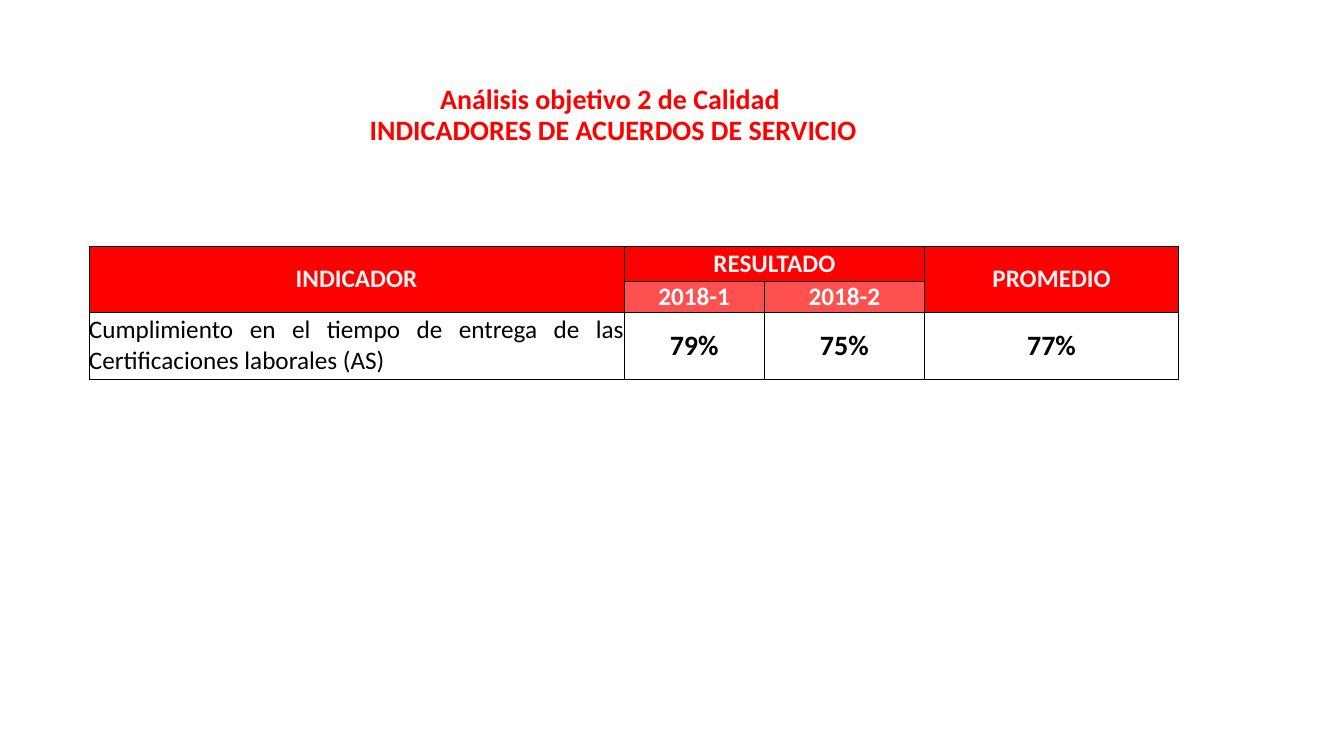
"""Build the slide with the service agreement indicators."""
import dataclasses

import lxml.etree
import pptx
import pptx.dml.color
import pptx.enum.text
import pptx.oxml.ns
import pptx.slide
import pptx.table
import pptx.text.text
import pptx.util
from pptx.util import Cm

FONT = "Calibri"
RED = "FF0000"
CENTER = pptx.enum.text.PP_ALIGN.CENTER
JUSTIFY = pptx.enum.text.PP_ALIGN.JUSTIFY
COLUMN_WIDTHS = (13.49, 3.53, 4.04, 6.4)
ROW_HEIGHTS = (0.89, 0.77, 1.7)


@dataclasses.dataclass(frozen=True)
class CellSpec:
    """Text, place and look of one table cell."""

    row: int
    column: int
    text: str
    fill: str = RED
    color: str = "F2F2F2"
    size: int = 18
    bold: bool = True
    align: pptx.enum.text.PP_ALIGN = CENTER
    rows: int = 1
    columns: int = 1


HEADERS = [
    CellSpec(0, 0, "INDICADOR", rows=2),
    CellSpec(0, 1, "RESULTADO", columns=2),
    CellSpec(0, 3, "PROMEDIO", rows=2),
]
PERIODS = [
    CellSpec(1, column, text, "FF5050", "FFFFFF")
    for column, text in enumerate(("2018-1", "2018-2"), start=1)
]
INDICATOR = CellSpec(
    2, 0, "Cumplimiento en el tiempo de entrega de las Certificaciones laborales (AS)",
    "FFFFFF", "000000", bold=False, align=JUSTIFY,
)
RESULTS = [
    CellSpec(2, column, text, "FFFFFF", "000000", 20)
    for column, text in enumerate(("79%", "75%", "77%"), start=1)
]


def rgb(color: str) -> pptx.dml.color.RGBColor:
    """Turn a hex string into a colour."""
    return pptx.dml.color.RGBColor.from_string(color)


def format_text(para: pptx.text.text._Paragraph, size: int, color: str, bold: bool) -> None:
    """Set the font of every run in a paragraph."""
    for span in para.runs:
        span.font.name = FONT
        span.font.size = pptx.util.Pt(size)
        span.font.bold = bold
        span.font.color.rgb = rgb(color)


def add_title(page: pptx.slide.Slide) -> None:
    """Add the two-line title."""
    box = page.shapes.add_textbox(Cm(1.75), Cm(2.06), Cm(27.41), Cm(1.75))
    frame = box.text_frame
    frame.word_wrap = True
    frame.vertical_anchor = pptx.enum.text.MSO_ANCHOR.BOTTOM
    para = frame.paragraphs[0]
    para.text = "Análisis objetivo 2 de Calidad \vINDICADORES DE ACUERDOS DE SERVICIO"
    para.alignment = CENTER
    para.line_spacing = 0.9
    format_text(para, 20, RED, True)


def add_borders(cell: pptx.table._Cell) -> None:
    """Draw thin black lines on the four sides of a cell."""
    properties = cell._tc.get_or_add_tcPr()
    qn = pptx.oxml.ns.qn
    for index, side in enumerate(("a:lnL", "a:lnR", "a:lnT", "a:lnB")):
        line = lxml.etree.Element(qn(side), w=str(pptx.util.Pt(0.5)))
        fill = lxml.etree.SubElement(line, qn("a:solidFill"))
        lxml.etree.SubElement(fill, qn("a:srgbClr"), val="000000")
        properties.insert(index, line)


def fill_cell(table: pptx.table.Table, spec: CellSpec) -> None:
    """Merge, fill and write one cell."""
    cell = table.cell(spec.row, spec.column)
    if spec.rows * spec.columns > 1:
        cell.merge(table.cell(spec.row + spec.rows - 1, spec.column + spec.columns - 1))
    cell.fill.solid()
    cell.fill.fore_color.rgb = rgb(spec.fill)
    cell.vertical_anchor = pptx.enum.text.MSO_ANCHOR.MIDDLE
    cell.margin_left = cell.margin_right = cell.margin_top = cell.margin_bottom = Cm(0)
    para = cell.text_frame.paragraphs[0]
    para.text = spec.text
    para.alignment = spec.align
    format_text(para, spec.size, spec.color, spec.bold)


def add_indicator_table(page: pptx.slide.Slide) -> None:
    """Add the table of indicators and results."""
    table = page.shapes.add_table(
        len(ROW_HEIGHTS), len(COLUMN_WIDTHS), Cm(2.24), Cm(6.2),
        Cm(sum(COLUMN_WIDTHS)), Cm(sum(ROW_HEIGHTS)),
    ).table
    table.first_row = table.horz_banding = False
    for column, width in zip(table.columns, COLUMN_WIDTHS):
        column.width = Cm(width)
    for row, height in zip(table.rows, ROW_HEIGHTS):
        row.height = Cm(height)
    for spec in [*HEADERS, *PERIODS, INDICATOR, *RESULTS]:
        fill_cell(table, spec)
    for cell in table.iter_cells():
        add_borders(cell)


def main() -> None:
    """Create and save the deck."""
    deck = pptx.Presentation()
    deck.slide_width, deck.slide_height = Cm(33.87), Cm(19.05)
    page = deck.slides.add_slide(deck.slide_layouts[6])
    add_title(page)
    add_indicator_table(page)
    deck.save("out.pptx")


if __name__ == "__main__":
    main()
